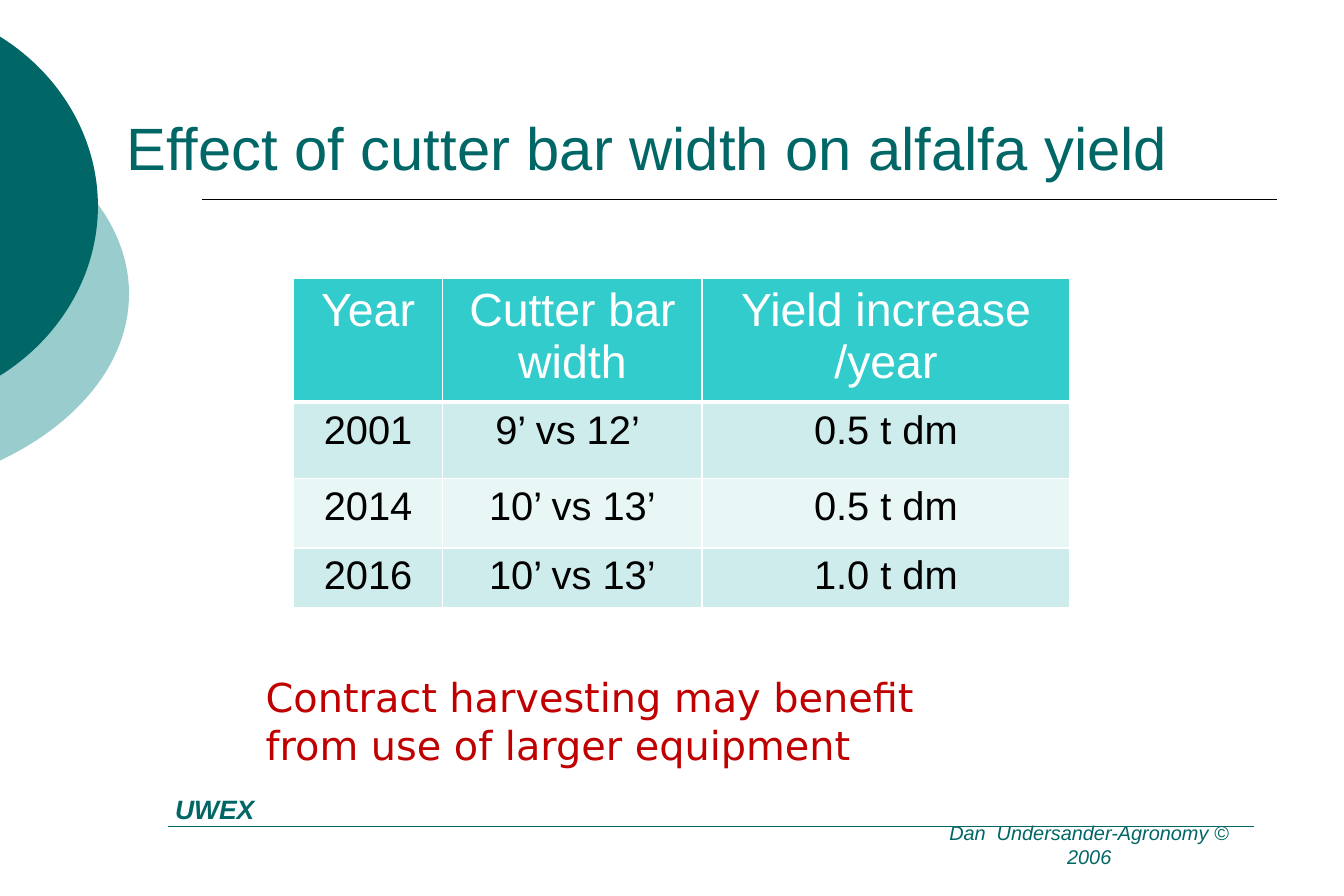
from dataclasses import dataclass

from lxml import etree
from pptx import Presentation
from pptx import util as u
from pptx.dml.color import RGBColor
from pptx.enum import shapes, text
from pptx.oxml import ns


@dataclass(frozen=True)
class Theme:
    font: str = "Arial"
    caption_font: str = "DejaVu Sans"
    teal: str = "006666"
    pale_teal: str = "99CCCC"
    header: str = "33CCCC"
    bands: tuple = ("CEECEC", "E8F6F6")
    white: str = "FFFFFF"
    black: str = "000000"
    red: str = "C00000"
    title_size: int = 36
    header_size: int = 28
    body_size: int = 24
    label_size: int = 16
    copyright_size: int = 12
    line_width: int = 1
    header_line_width: int = 3


THEME = Theme()
CELL = u.Inches(0.125)  # the slide is a grid of 90 columns by 60 rows
COLUMNS, ROWS = 90, 60

COLUMN_WIDTHS = (10, 17.36, 24.64)
ROW_HEIGHTS = (8.24, 5.12, 4.64, 4)
YIELDS = (
    ("Year", "Cutter bar width", "Yield increase /year"),
    ("2001", "9’ vs 12’ ", "0.5 t dm"),
    ("2014", "10’ vs 13’", "0.5 t dm"),
    ("2016", "10’ vs 13’", "1.0 t dm"),
)


def grid(*cells):
    return [u.Emu(round(cell * CELL)) for cell in cells]


def color(value):
    return RGBColor.from_string(value)


def write(frame, words, size, ink, font=THEME.font, align=text.PP_ALIGN.LEFT,
          bold=False, italic=False):
    frame.text = words
    paragraph = frame.paragraphs[0]
    paragraph.alignment = align
    style = paragraph.runs[0].font
    style.name, style.size = font, u.Pt(size)
    style.bold, style.italic = bold, italic
    style.color.rgb = color(ink)


def add_text(slide, box, words, size, ink, anchor=text.MSO_ANCHOR.MIDDLE, **style):
    frame = slide.shapes.add_textbox(*grid(*box)).text_frame
    frame.word_wrap = True
    frame.vertical_anchor = anchor
    write(frame, words, size, ink, **style)


def add_rule(slide, left, right, row, ink):
    rule = slide.shapes.add_connector(
        shapes.MSO_CONNECTOR.STRAIGHT, *grid(left, row, right, row))
    rule.line.color.rgb = color(ink)
    rule.line.width = u.Pt(THEME.line_width)
    etree.SubElement(rule._element.spPr, ns.qn("a:effectLst"))


def add_edge_disc(slide, box, upper_curve, fill):
    """Draw a disc cut by the left edge: an upper curve and its mirror below."""
    left, top, width, height = box
    right, bottom = left + width, top + height
    builder = slide.shapes.build_freeform(*grid(left, top))
    builder.add_line_segments(
        [grid(*corner) for corner in ((right, top), (right, bottom), (left, bottom))])
    disc = builder.convert_to_shape()

    lower_curve = [(x, 2 * top + height - y) for x, y in reversed(upper_curve)]
    outline = disc._element.spPr.find(".//" + ns.qn("a:path"))
    for segment in list(outline):
        outline.remove(segment)
    for tag, points in (("moveTo", upper_curve[:1]), ("cubicBezTo", upper_curve[1:]),
                        ("cubicBezTo", lower_curve[1:]), ("close", ())):
        segment = etree.SubElement(outline, ns.qn(f"a:{tag}"))
        for x, y in points:
            x, y = grid(x - left, y - top)
            etree.SubElement(segment, ns.qn("a:pt"), x=str(x), y=str(y))

    disc.shadow.inherit = False
    disc.fill.solid()
    disc.fill.fore_color.rgb = color(fill)
    disc.line.fill.background()


def border_cell(cell, bottom_width):
    properties = cell._tc.get_or_add_tcPr()
    for position, side in enumerate(("lnL", "lnR", "lnT", "lnB")):
        width = bottom_width if side == "lnB" else THEME.line_width
        line = etree.Element(ns.qn(f"a:{side}"), w=str(u.Pt(width)))
        fill = etree.SubElement(line, ns.qn("a:solidFill"))
        etree.SubElement(fill, ns.qn("a:srgbClr"), val=THEME.white)
        properties.insert(position, line)


def add_yield_table(slide, left, top):
    box = grid(left, top, sum(COLUMN_WIDTHS), sum(ROW_HEIGHTS))
    table = slide.shapes.add_table(len(YIELDS), len(COLUMN_WIDTHS), *box).table
    for column, width in zip(table.columns, grid(*COLUMN_WIDTHS)):
        column.width = width
    for row, height in zip(table.rows, grid(*ROW_HEIGHTS)):
        row.height = height
    for index, values in enumerate(YIELDS):
        if index == 0:
            fill, size, ink = THEME.header, THEME.header_size, THEME.white
            bottom_width = THEME.header_line_width
        else:
            fill = THEME.bands[(index - 1) % 2]
            size, ink = THEME.body_size, THEME.black
            bottom_width = THEME.line_width
        for column, words in enumerate(values):
            cell = table.cell(index, column)
            cell.fill.solid()
            cell.fill.fore_color.rgb = color(fill)
            write(cell.text_frame, words, size, ink, align=text.PP_ALIGN.CENTER)
            border_cell(cell, bottom_width)


def set_title(slide, box, words):
    title = slide.shapes.title
    title.left, title.top, title.width, title.height = grid(*box)
    title.text_frame.vertical_anchor = text.MSO_ANCHOR.BOTTOM
    title.text_frame.auto_size = text.MSO_AUTO_SIZE.NONE
    write(title.text_frame, words, THEME.title_size, THEME.teal)


def main():
    presentation = Presentation()
    presentation.slide_width, presentation.slide_height = grid(COLUMNS, ROWS)
    slide = presentation.slides.add_slide(presentation.slide_layouts[5])

    # Decoration at the left edge and the rule below the title
    add_edge_disc(slide, (-31.84, 6, 40.48, 27.36),
                  [(-0.08, 8.48), (5.36, 11.04), (8.64, 15.2), (8.64, 19.68)],
                  THEME.pale_teal)
    add_edge_disc(slide, (-23.84, 0, 30.48, 27.6),
                  [(-0.08, 2.4), (4.08, 4.96), (6.56, 9.28), (6.56, 13.8)],
                  THEME.teal)
    add_rule(slide, 13.52, 85.52, 13.36, THEME.black)

    # Footer
    add_rule(slide, 11.28, 84, 55.36, THEME.teal)
    add_text(slide, (10.5, 52.68, 7.76, 2.96), "UWEX", THEME.label_size,
             THEME.teal, align=text.PP_ALIGN.CENTER, bold=True, italic=True)
    add_text(slide, (61.14, 55.36, 23.6, 2.4), "Dan  Undersander-Agronomy © 2006",
             THEME.copyright_size, THEME.teal, align=text.PP_ALIGN.CENTER,
             italic=True)

    # Content
    set_title(slide, (7.68, 2.64, 80.64, 10),
              "Effect of cutter bar width on alfalfa yield")
    add_yield_table(slide, 19.65, 18.66)
    add_text(slide, (17, 44.64, 50.24, 7.28),
             "Contract harvesting may benefit from use of larger equipment",
             THEME.body_size, THEME.red, anchor=text.MSO_ANCHOR.TOP,
             font=THEME.caption_font)

    presentation.save("out.pptx")


if __name__ == "__main__":
    main()
